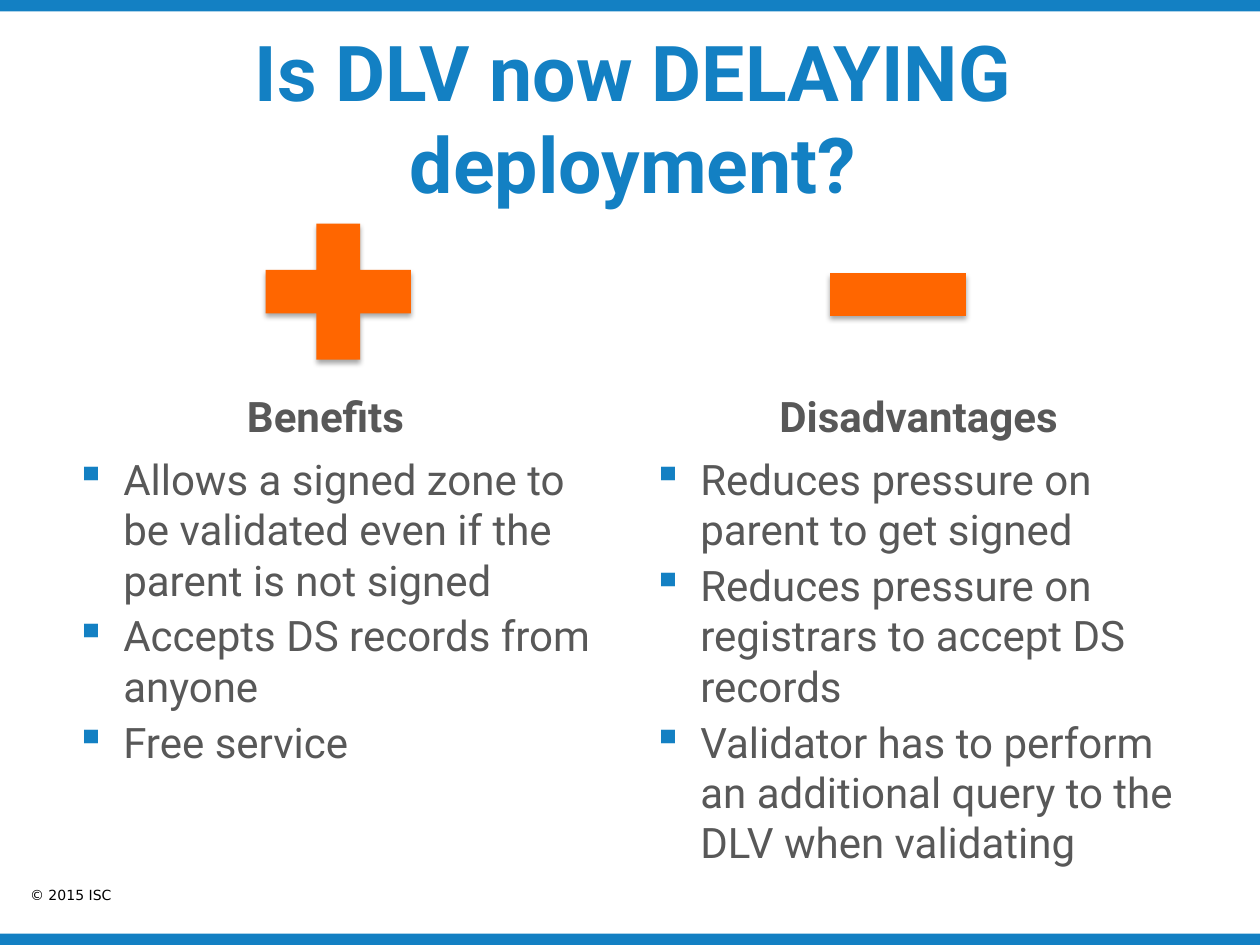
from lxml.etree import SubElement
from pptx import Presentation
from pptx.dml.color import RGBColor
from pptx.enum.shapes import MSO_SHAPE
from pptx.enum.text import MSO_ANCHOR, PP_ALIGN
from pptx.oxml import parse_xml
from pptx.oxml.ns import nsdecls, qn
from pptx.util import Inches, Pt

BLUE = RGBColor(0x13, 0x80, 0xC3)
GREY = RGBColor(0x58, 0x58, 0x58)
ORANGE = RGBColor(0xFF, 0x66, 0x00)
BLACK = RGBColor(0, 0, 0)

TITLE = {"name": "Roboto", "size": Pt(44), "bold": True}
HEADING = {"name": "Roboto", "size": Pt(24), "bold": True}
BODY = {"name": "Roboto", "size": Pt(24), "bold": False}
COPYRIGHT = {"name": "DejaVu Sans", "size": Pt(8), "bold": False}

SLIDE_WIDTH, SLIDE_HEIGHT, BAR_HEIGHT = 10, 7.5, 0.09
COLUMN_WIDTH = 4.42
HANGING_INDENT = Inches(0.38)

COLUMNS = [
    (0.5, "Benefits\t", [
        "Allows a signed zone to be validated even if the parent is not signed",
        "Accepts DS records from anyone",
        "Free service",
    ]),
    (5.08, "Disadvantages", [
        "Reduces pressure on parent to get signed",
        "Reduces pressure on registrars to accept DS records",
        "Validator has to perform an additional query to the DLV when validating",
    ]),
]
SIGNS = [
    (MSO_SHAPE.MATH_PLUS, (1.9, 1.58, 1.57, 1.47)),
    (MSO_SHAPE.MATH_MINUS, (6.39, 1.62, 1.47, 1.44)),
]


def add_filled_shape(page, kind, place, color):
    shape = page.shapes.add_shape(kind, *map(Inches, place))
    shape.shadow.inherit = False
    shape.fill.solid()
    shape.fill.fore_color.rgb = color
    shape.line.fill.background()
    return shape


def add_soft_shadow(shape):
    """Put a short, blurred shadow straight below the shape."""
    effects = shape._element.spPr.find(qn("a:effectLst"))
    effects.append(parse_xml(
        f'<a:outerShdw {nsdecls("a")} blurRad="{Pt(3.1)}" dist="{Pt(1.8)}"'
        ' dir="5400000" rotWithShape="0"><a:srgbClr val="000000">'
        '<a:alpha val="35000"/></a:srgbClr></a:outerShdw>'))


def add_bullet(para):
    properties = para._p.get_or_add_pPr()
    properties.set("marL", str(HANGING_INDENT))
    properties.set("indent", str(-HANGING_INDENT))
    color = SubElement(properties, qn("a:buClr"))
    SubElement(color, qn("a:srgbClr"), val=str(BLUE))
    SubElement(properties, qn("a:buChar"), char="▪")


def add_text(page, place, lines, style, color, anchor=MSO_ANCHOR.TOP,
             align=PP_ALIGN.LEFT, bulleted=False):
    box = page.shapes.add_textbox(*map(Inches, place))
    frame = box.text_frame
    frame.word_wrap = True
    frame.vertical_anchor = anchor
    for index, line in enumerate(lines):
        para = frame.paragraphs[0] if index == 0 else frame.add_paragraph()
        para.alignment = align
        if bulleted:
            add_bullet(para)
        if index > 0:
            para.space_before = Pt(3)
        span = para.add_run()
        span.text = line
        for name, value in style.items():
            setattr(span.font, name, value)
        span.font.color.rgb = color
    return box


def add_column(page, left, heading, points):
    add_text(page, (left, 2.85, COLUMN_WIDTH, 0.7), [heading], HEADING, GREY,
             MSO_ANCHOR.BOTTOM, PP_ALIGN.CENTER)
    add_text(page, (left, 3.55, COLUMN_WIDTH, 4.32), points, BODY, GREY,
             bulleted=True)


def main():
    deck = Presentation()
    deck.slide_width = Inches(SLIDE_WIDTH)
    deck.slide_height = Inches(SLIDE_HEIGHT)
    page = deck.slides.add_slide(deck.slide_layouts[6])

    for top in (SLIDE_HEIGHT - BAR_HEIGHT, 0):
        add_filled_shape(page, MSO_SHAPE.RECTANGLE,
                         (0, top, SLIDE_WIDTH, BAR_HEIGHT), BLUE)
    add_text(page, (0.14, 6.99, 1.86, 0.24), ["© 2015 ISC"], COPYRIGHT, BLACK)
    title = add_text(page, (0.5, 0.3, 9, 1.25),
                     ["Is DLV now DELAYING deployment?"], TITLE, BLUE,
                     MSO_ANCHOR.MIDDLE, PP_ALIGN.CENTER)
    title.text_frame.margin_left = Inches(0.15)

    for left, heading, points in COLUMNS:
        add_column(page, left, heading, points)
    for kind, place in SIGNS:
        add_soft_shadow(add_filled_shape(page, kind, place, ORANGE))

    deck.save("out.pptx")


if __name__ == "__main__":
    main()
